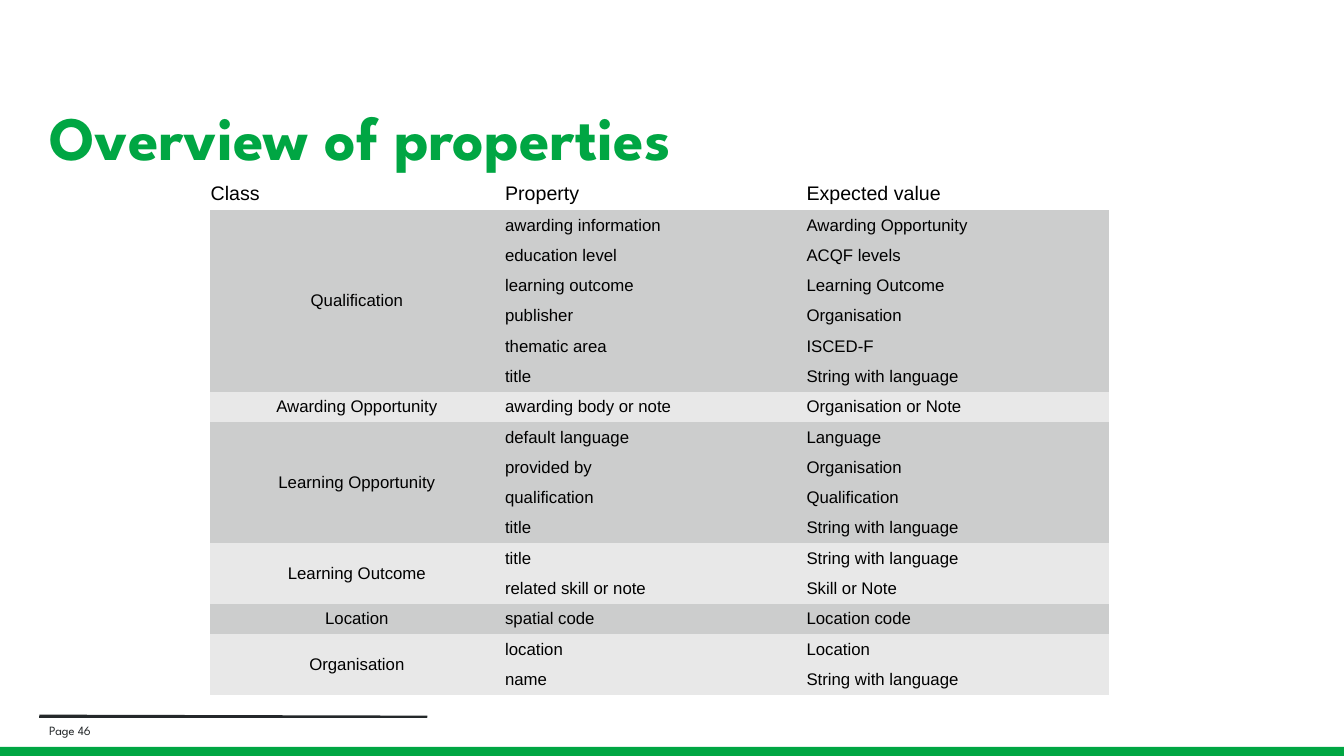
from lxml import etree
from pptx import Presentation
from pptx.dml.color import RGBColor
from pptx.enum.shapes import MSO_CONNECTOR, MSO_SHAPE
from pptx.enum.text import MSO_ANCHOR, PP_ALIGN
from pptx.oxml.ns import qn
from pptx.util import Inches, Pt

COLORS = {
    "green": "00A643",
    "ink": "24282A",
    "black": "000000",
    "dark_band": "CCCDCD",
    "light_band": "E8E8E8",
}
NO_STYLE_NO_GRID = "{2D5ABB26-0587-4C30-8999-92F81FD0307C}"

HEADER = ["Class", "Property", "Expected value"]
CLASSES = [
    ("Qualification", [
        ("awarding information", "Awarding Opportunity"),
        ("education level", "ACQF levels"),
        ("learning outcome", "Learning Outcome"),
        ("publisher", "Organisation"),
        ("thematic area", "ISCED-F"),
        ("title", "String with language"),
    ]),
    ("Awarding Opportunity", [("awarding body or note", "Organisation or Note")]),
    ("Learning Opportunity", [
        ("default language", "Language"),
        ("provided by", "Organisation"),
        ("qualification", "Qualification"),
        ("title", "String with language"),
    ]),
    ("Learning Outcome", [
        ("title", "String with language"),
        ("related skill or note", "Skill or Note"),
    ]),
    ("Location", [("spatial code", "Location code")]),
    ("Organisation", [("location", "Location"), ("name", "String with language")]),
]


def format_text(paragraph, font_name, size, color, bold=False):
    font = paragraph.runs[0].font
    font.name = font_name
    font.size = Pt(size)
    font.bold = bold
    font.color.rgb = RGBColor.from_string(COLORS[color])


def fill_cell(cell, text, size, alignment, band=None):
    cell.text_frame.text = text
    cell.vertical_anchor = MSO_ANCHOR.MIDDLE
    cell.margin_left = cell.margin_right = Inches(0.01)
    cell.margin_top = cell.margin_bottom = Inches(0.05)
    paragraph = cell.text_frame.paragraphs[0]
    paragraph.alignment = alignment
    format_text(paragraph, "Arial", size, "black")
    if band:
        cell.fill.solid()
        cell.fill.fore_color.rgb = RGBColor.from_string(COLORS[band])
    else:
        cell.fill.background()


presentation = Presentation()
presentation.slide_width = Inches(13.33)
presentation.slide_height = Inches(7.5)
slide = presentation.slides.add_slide(presentation.slide_layouts[6])

# Footer rules and bar
for start_y in (7.11, 7.1):
    rule = slide.shapes.add_connector(
        MSO_CONNECTOR.STRAIGHT, Inches(0.39), Inches(start_y), Inches(4.24), Inches(7.11))
    rule.line.color.rgb = RGBColor.from_string(COLORS["ink"])
    rule.line.width = Pt(1.5)
    etree.SubElement(rule._element.spPr, qn("a:effectLst"))

bar = slide.shapes.add_shape(
    MSO_SHAPE.RECTANGLE, Inches(-0.03), Inches(7.41), Inches(13.4), Inches(0.13))
bar.shadow.inherit = False
bar.fill.solid()
bar.fill.fore_color.rgb = RGBColor.from_string(COLORS["green"])
bar.line.fill.background()

# Title and page number
for text, top, width, height, size, color, bold, spacing in [
    ("Overview of properties", 0.67, 12.54, 1.45, 44, "green", True, 0.9),
    ("Page 46", 7.15, 4.06, 0.19, 9, "ink", False, 1.0),
]:
    text_box = slide.shapes.add_textbox(
        Inches(0.39), Inches(top), Inches(width), Inches(height))
    text_frame = text_box.text_frame
    text_frame.word_wrap = True
    text_frame.vertical_anchor = MSO_ANCHOR.MIDDLE
    text_frame.text = text
    text_frame.paragraphs[0].line_spacing = spacing
    format_text(text_frame.paragraphs[0], "League Spartan", size, color, bold)

# Table frame
row_count = 1 + sum(len(properties) for _, properties in CLASSES)
table = slide.shapes.add_table(
    row_count, 3, Inches(2.08), Inches(1.75), Inches(8.92), Inches(4.96)).table
table.first_row = False
table.horz_banding = False
table._tbl.tblPr.find(qn("a:tableStyleId")).text = NO_STYLE_NO_GRID
for column, width in zip(table.columns, (2.92, 2.99, 3.01)):
    column.width = Inches(width)
for index, row in enumerate(table.rows):
    row.height = Inches(0.29 if index else 0.32)

# Header row
for index, heading in enumerate(HEADER):
    fill_cell(table.cell(0, index), heading, 14, PP_ALIGN.JUSTIFY)

# One band per class, dark and light in turn
first_row = 1
for class_index, (class_name, properties) in enumerate(CLASSES):
    band = "light_band" if class_index % 2 else "dark_band"
    last_row = first_row + len(properties) - 1
    class_cell = table.cell(first_row, 0)
    if last_row > first_row:
        class_cell.merge(table.cell(last_row, 0))
    fill_cell(class_cell, class_name, 12, PP_ALIGN.CENTER, band)
    for row_index, values in enumerate(properties, first_row):
        for column_index, value in enumerate(values, 1):
            fill_cell(table.cell(row_index, column_index), value, 12, PP_ALIGN.JUSTIFY, band)
    first_row = last_row + 1

presentation.save("out.pptx")
